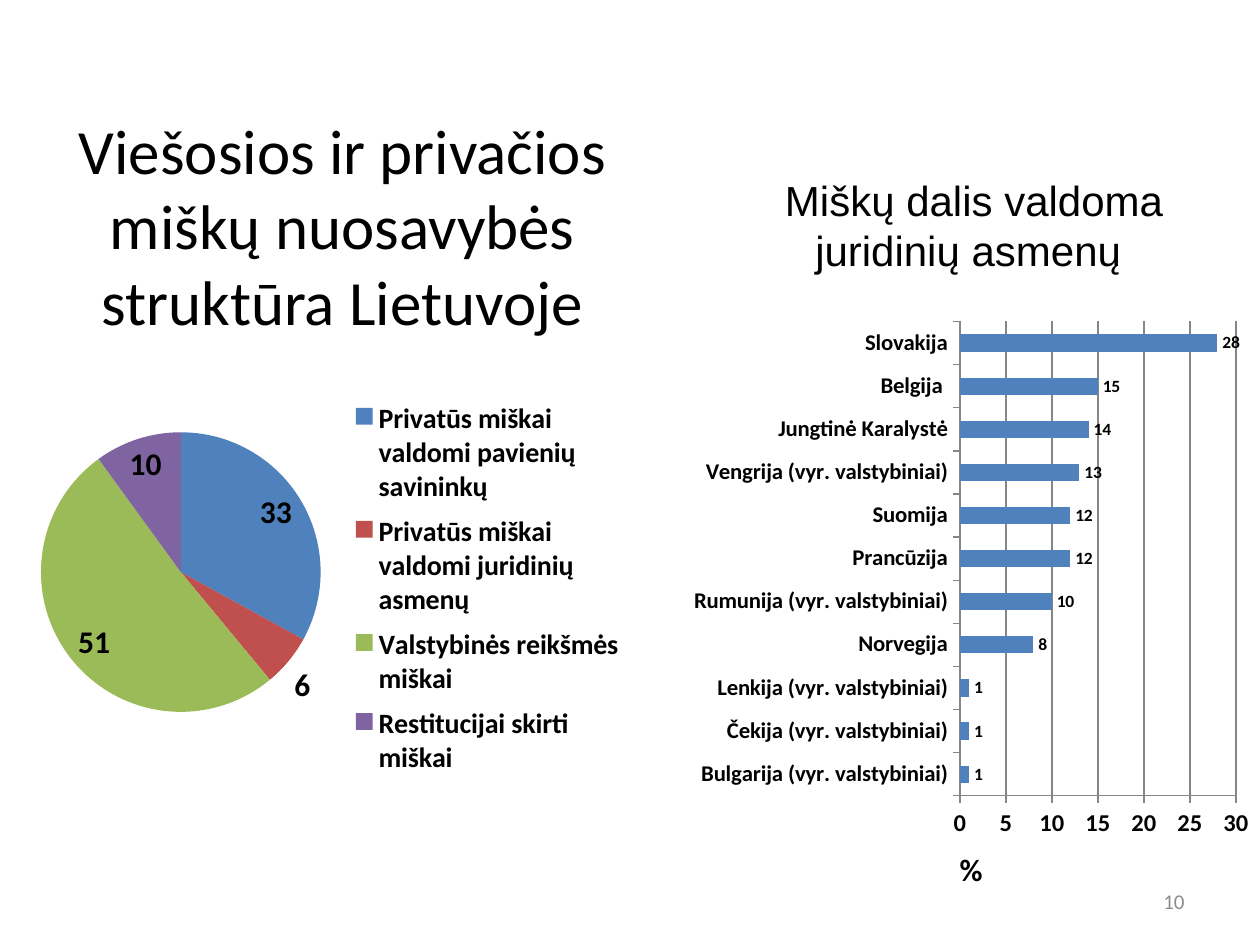
from lxml import etree
from pptx import Presentation
from pptx.chart.data import CategoryChartData
from pptx.dml.color import RGBColor
from pptx.enum.chart import XL_CHART_TYPE, XL_LABEL_POSITION, XL_LEGEND_POSITION, XL_TICK_MARK
from pptx.enum.text import MSO_ANCHOR, MSO_AUTO_SIZE, PP_ALIGN
from pptx.oxml import parse_xml
from pptx.oxml.ns import nsdecls, qn
from pptx.util import Emu, Pt

PIE, BAR = XL_CHART_TYPE.PIE, XL_CHART_TYPE.BAR_CLUSTERED
BEST_FIT, OUTSIDE_END = XL_LABEL_POSITION.BEST_FIT, XL_LABEL_POSITION.OUTSIDE_END
LEGEND_RIGHT = XL_LEGEND_POSITION.RIGHT
TICK_OUT, TICK_NONE = XL_TICK_MARK.OUTSIDE, XL_TICK_MARK.NONE
TOP, MIDDLE = MSO_ANCHOR.TOP, MSO_ANCHOR.MIDDLE
CENTER, RIGHT = PP_ALIGN.CENTER, PP_ALIGN.RIGHT
NO_AUTOFIT = MSO_AUTO_SIZE.NONE

EMU_PER_PX = 914400 / 126
BLACK, GRAY, AXIS_GRAY, BLUE = "000000", "8C8C8C", "868686", "4F81BD"

OWNERSHIP = [
    ("Privatūs miškai valdomi pavienių savininkų", 33, BLUE),
    ("Privatūs miškai valdomi juridinių asmenų", 6, "C0504D"),
    ("Valstybinės reikšmės miškai", 51, "9BBB59"),
    ("Restitucijai skirti miškai", 10, "8064A2"),
]
LEGAL_ENTITY_SHARE = [
    ("Bulgarija (vyr. valstybiniai)", 1),
    ("Čekija (vyr. valstybiniai)", 1),
    ("Lenkija (vyr. valstybiniai)", 1),
    ("Norvegija", 8),
    ("Rumunija (vyr. valstybiniai)", 10),
    ("Prancūzija", 12),
    ("Suomija", 12),
    ("Vengrija (vyr. valstybiniai)", 13),
    ("Jungtinė Karalystė", 14),
    ("Belgija ", 15),
    ("Slovakija", 28),
]


def px(length):
    """Turn pixels into EMU."""
    return Emu(round(length * EMU_PER_PX))


def color(hex_code):
    """Turn a hex string into a colour."""
    return RGBColor.from_string(hex_code)


def set_font(font, size, name="Calibri", hex_code=BLACK, bold=False):
    """Format one font object."""
    font.size, font.name, font.bold = Pt(size), name, bold
    font.color.rgb = color(hex_code)


def fill_text(box, text, size, align, anchor, name="Calibri", hex_code=BLACK):
    """Write one formatted paragraph into a box."""
    frame = box.text_frame
    frame.word_wrap, frame.auto_size = True, NO_AUTOFIT
    frame.vertical_anchor = anchor
    para = frame.paragraphs[0]
    para.text, para.alignment = text, align
    set_font(para.font, size, name, hex_code)


def add_title(page, text, area):
    """Move and fill the title placeholder."""
    box = page.shapes.title
    box.left, box.top, box.width, box.height = map(px, area)
    fill_text(box, text, 36, CENTER, MIDDLE)


def add_text(page, text, area, *style):
    """Add a text box."""
    fill_text(page.shapes.add_textbox(*map(px, area)), text, *style)


def set_layout(parent, before, inner=False, **fractions):
    """Place a chart part by fractions of the chart area."""
    for old in parent.findall(qn("c:layout")):
        parent.remove(old)
    layout = parse_xml(f"<c:layout {nsdecls('c')}><c:manualLayout/></c:layout>")
    settings = {"layoutTarget": "inner"} if inner else {}
    settings.update(xMode="edge", yMode="edge", **fractions)
    for tag, value in settings.items():
        etree.SubElement(layout[0], qn(f"c:{tag}")).set("val", str(value))
    following = next((child for child in parent if child.tag in map(qn, before)), None)
    if following is None:
        parent.append(layout)
    else:
        following.addprevious(layout)


def add_chart(page, kind, area, rows, label_size, label_position, plot_area):
    """Add a one-series chart with value labels and a fixed plot area."""
    data = CategoryChartData(number_format="General")
    data.categories = [row[0] for row in rows]
    data.add_series("Series 1", [row[1] for row in rows])
    chart = page.shapes.add_chart(kind, *map(px, area), data).chart
    chart.has_title = chart.has_legend = False
    set_font(chart.font, 10)
    plot = chart.plots[0]
    plot.vary_by_categories = kind == PIE
    plot.has_data_labels = True
    labels = plot.data_labels
    labels.show_value, labels.position = True, label_position
    labels.number_format, labels.number_format_is_linked = "0", False
    set_font(labels.font, label_size, bold=True)
    set_layout(plot_area_of(chart), ["c:pieChart", "c:barChart"], True, **plot_area)
    return chart


def plot_area_of(chart):
    """Find the plot area element of a chart."""
    return chart.element.find(".//" + qn("c:plotArea"))


def add_ownership_pie(page):
    """Add the pie of forest ownership with its legend."""
    chart = add_chart(page, PIE, (35, 383, 595, 425), OWNERSHIP, 18, BEST_FIT,
                      dict(x=0.01, y=0.1, w=0.47, h=0.69))
    for index, row in enumerate(OWNERSHIP):
        fill = chart.plots[0].series[0].points[index].format.fill
        fill.solid()
        fill.fore_color.rgb = color(row[2])
    chart.has_legend = True
    legend = chart.legend
    legend.position, legend.include_in_layout = LEGEND_RIGHT, False
    set_font(legend.font, 16, bold=True)
    set_layout(chart.element.find(".//" + qn("c:legend")),
               ["c:overlay", "c:spPr", "c:txPr"], x=0.53, y=0.02, w=0.47, h=0.93)


def format_axis(axis, size):
    """Format the line, ticks and labels of an axis."""
    axis.major_tick_mark, axis.minor_tick_mark = TICK_OUT, TICK_NONE
    axis.format.line.color.rgb = color(AXIS_GRAY)
    set_font(axis.tick_labels.font, size, bold=True)


def add_share_bars(page):
    """Add the bars of forest share held by legal entities."""
    chart = add_chart(page, BAR, (660, 304, 600, 595), LEGAL_ENTITY_SHARE, 10, OUTSIDE_END,
                      dict(x=0.5, y=0.03, w=0.46, h=0.81))
    plot = chart.plots[0]
    plot.gap_width = 150
    fill = plot.series[0].format.fill
    fill.solid()
    fill.fore_color.rgb = color(BLUE)
    format_axis(chart.category_axis, 13)
    axis = chart.value_axis
    format_axis(axis, 14)
    axis.minimum_scale, axis.maximum_scale, axis.major_unit = 0, 30, 5
    axis.has_major_gridlines = True
    axis.major_gridlines.format.line.color.rgb = color(AXIS_GRAY)
    para = axis.axis_title.text_frame.paragraphs[0]
    para.text = "%"
    set_font(para.font, 18, bold=True)
    set_layout(plot_area_of(chart).find(".//" + qn("c:title")),
               ["c:overlay", "c:spPr", "c:txPr"], x=0.49, y=0.92)


def main():
    """Build and save the slide."""
    deck = Presentation()
    deck.slide_width, deck.slide_height = px(1260), px(945)
    page = deck.slides.add_slide(deck.slide_layouts[5])
    add_title(page, "Viešosios ir privačios miškų nuosavybės struktūra Lietuvoje",
              (25, 151, 635, 147))
    add_text(page, "10", (903, 876, 294, 50), 12, RIGHT, MIDDLE, "Calibri", GRAY)
    add_ownership_pie(page)
    add_share_bars(page)
    add_text(page, "Miškų dalis valdoma juridinių asmenų ", (706, 168, 536, 115),
             24, CENTER, TOP, "Arial")
    deck.save("out.pptx")


if __name__ == "__main__":
    main()
